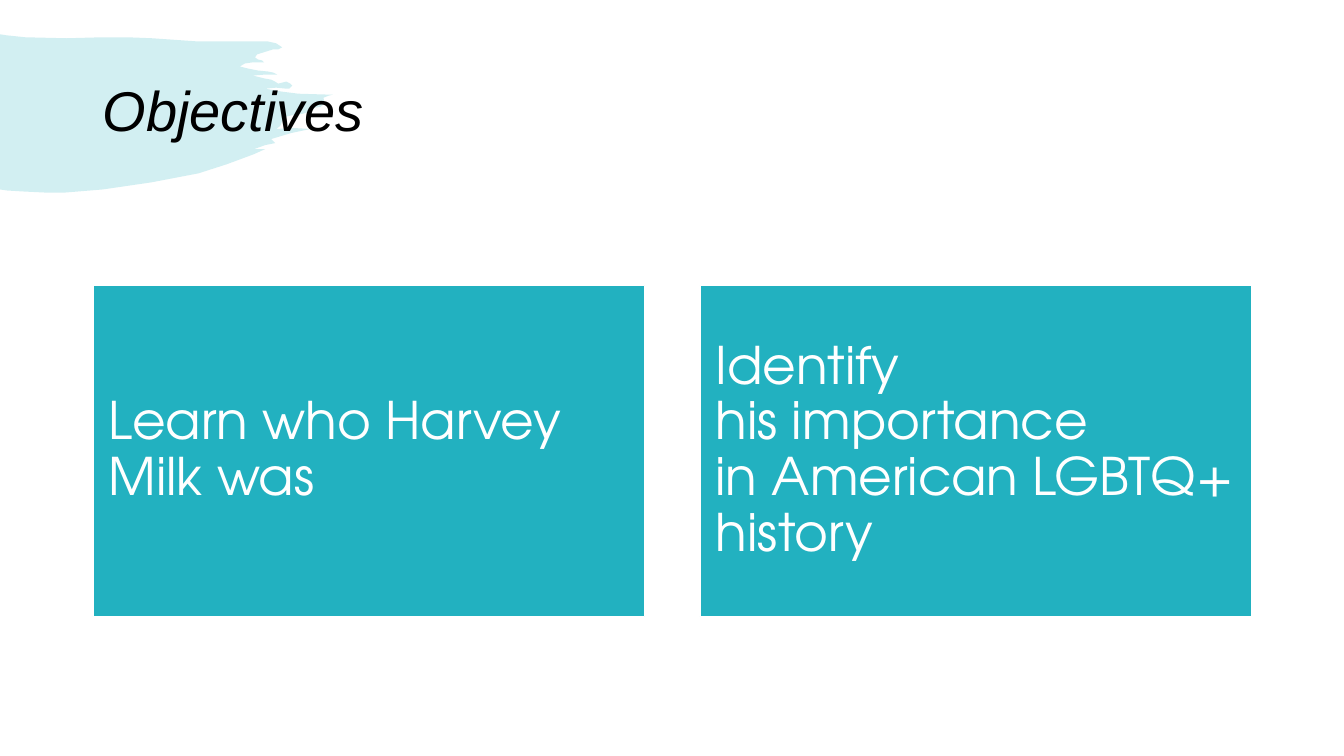
from lxml import etree
from pptx import Presentation
from pptx.dml.color import RGBColor
from pptx.enum import shapes as sh, text as tx
from pptx.oxml import ns
from pptx.util import Pt

HUES = {"teal": "22B1C0", "white": "FFFFFF", "black": "000000"}
HARD = chr(160)  # no-break space, typed as ~ in the goals

# Brush outline, in hundredths of an inch from the slide's left and the stroke's top
BRUSH = [
    (0, 0), (6, 1), (25, 3), (66, 4), (102, 3), (126, 3), (151, 4), (194, 7),
    (221, 7), (248, 7), (265, 7), (274, 9), (280, 13), (276, 15), (271, 15),
    (255, 20), (253, 23), (256, 25), (260, 26), (262, 28), (250, 28), (243, 29),
    (238, 32), (246, 34), (256, 36), (266, 37), (271, 38), (275, 40), (263, 40),
    (251, 41), (263, 44), (269, 45), (273, 47), (276, 49), (280, 48), (284, 47),
    (288, 49), (290, 51), (287, 54), (284, 54), (274, 53), (263, 54), (280, 57),
    (296, 59), (330, 60), (326, 61), (321, 63), (322, 69), (318, 72), (312, 73),
    (307, 77), (300, 79), (291, 80), (283, 82), (280, 86), (278, 91), (274, 94),
    (291, 93), (308, 94), (289, 98), (269, 104), (273, 108), (263, 110),
    (252, 114), (263, 114), (252, 119), (225, 129), (197, 138), (150, 147),
    (102, 154), (65, 157), (44, 157), (23, 156), (7, 155), (0, 154),
]


def hue(name):
    return RGBColor.from_string(HUES[name])


def style(frame, size, font, color, inset):
    frame.word_wrap = True
    frame.vertical_anchor = tx.MSO_ANCHOR.MIDDLE
    frame.margin_left = frame.margin_right = Pt(inset[0])
    frame.margin_top = frame.margin_bottom = Pt(inset[1])
    para = frame.paragraphs[0]
    para.alignment = tx.PP_ALIGN.LEFT
    para.line_spacing = 0.9
    face = para.runs[0].font
    face.size, face.name = Pt(size), font
    face.color.rgb = hue(color)
    return face


# Pale brush stroke behind the title
def brush(slide, left, top):
    pen = slide.shapes.build_freeform(*BRUSH[0], scale=Pt(0.72))
    pen.add_line_segments(BRUSH[1:], close=True)
    stroke = pen.convert_to_shape(Pt(left), Pt(top))
    stroke.shadow.inherit = False
    stroke.line.fill.background()
    stroke.fill.solid()
    stroke.fill.fore_color.rgb = hue("teal")
    tint = stroke.fill._xPr.find(".//" + ns.qn("a:srgbClr"))
    etree.SubElement(tint, ns.qn("a:alpha"), val="20000")


# Slide title
def title(slide, left, top, width, height, words):
    box = slide.shapes.add_textbox(Pt(left), Pt(top), Pt(width), Pt(height))
    box.text_frame.text = words
    style(box.text_frame, 40, "Arial", "black", (7.2, 3.6)).italic = True


# Row of equal cards, one per goal
def cards(slide, left, top, width, height, goals, gap=39.4):
    wide = (width - gap * (len(goals) - 1)) / len(goals)
    for i, goal in enumerate(goals):
        card = slide.shapes.add_shape(
            sh.MSO_SHAPE.RECTANGLE, Pt(left + i * (wide + gap)), Pt(top),
            Pt(wide), Pt(height))
        card.shadow.inherit = False
        card.fill.solid()
        card.fill.fore_color.rgb = hue("teal")
        card.line.color.rgb = hue("white")
        card.line.width = Pt(1)
        card.text_frame.text = goal.replace("~", HARD)
        style(card.text_frame, 37, "TeX Gyre Adventor", "white", (11.1, 11.1))


def main():
    deck = Presentation()
    deck.slide_width, deck.slide_height = Pt(960), Pt(540)
    slide = deck.slides.add_slide(deck.slide_layouts[6])
    brush(slide, 0, 24.48)
    title(slide, 66.24, 28.8, 828, 104.4, "Objectives")
    cards(slide, 66.4, 203.9, 827.8, 236.6, [
        "Learn who~Harvey Milk was",
        "Identify his~importance in~American~LGBTQ+ history",
    ])
    deck.save("out.pptx")


if __name__ == "__main__":
    main()
